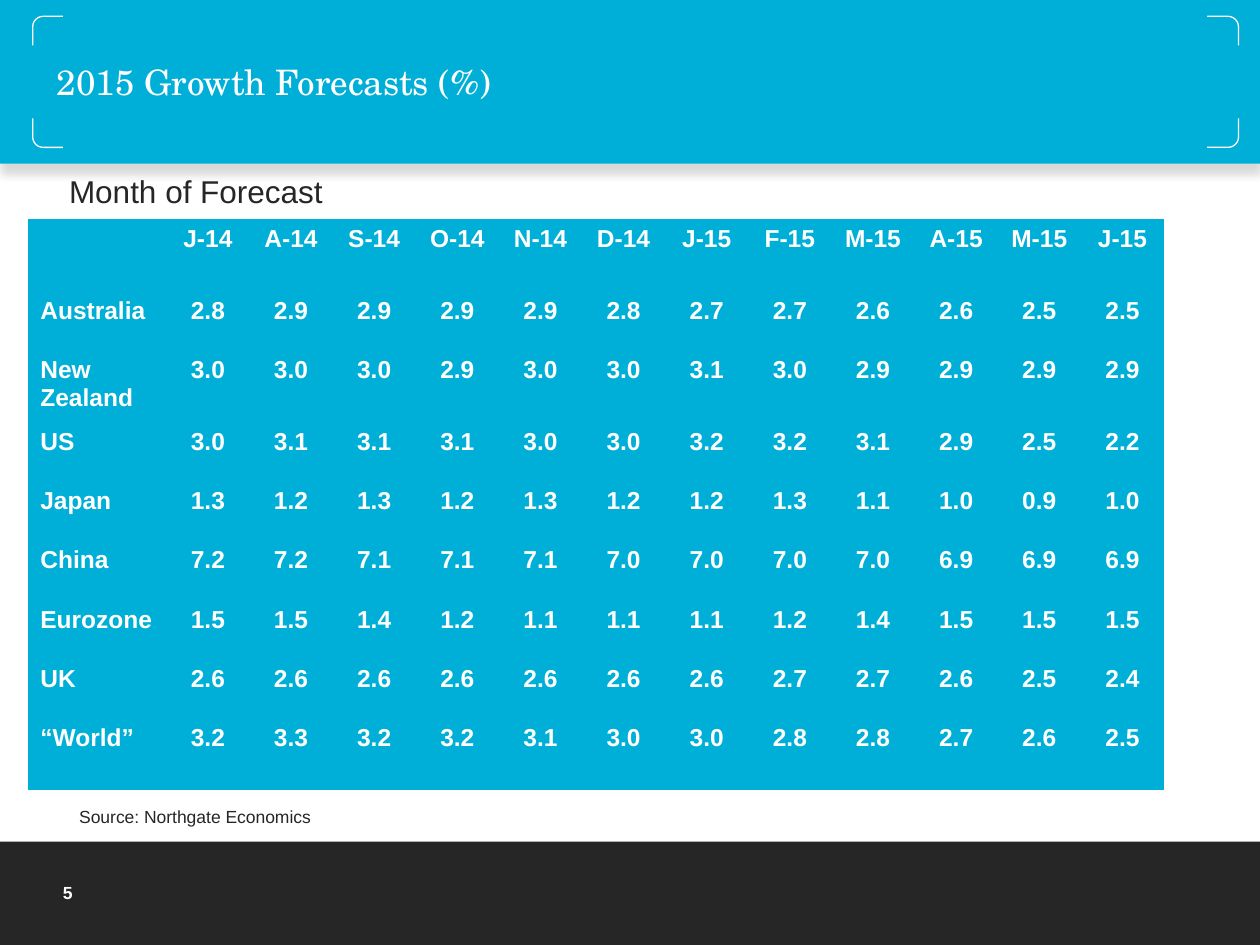
from lxml.etree import SubElement
from pptx import Presentation
from pptx.dml.color import RGBColor
from pptx.enum.shapes import MSO_SHAPE as SHAPE
from pptx.enum.text import MSO_ANCHOR as ANCHOR, PP_ALIGN as ALIGN
from pptx.oxml.ns import qn
from pptx.util import Inches, Pt

BLUE, DARK, WHITE = "00AFD7", "262626", "FFFFFF"
PLAIN_STYLE = "{2D5ABB26-0587-4C30-8999-92F81FD0307C}"
MONTHS = "J-14 A-14 S-14 O-14 N-14 D-14 J-15 F-15 M-15 A-15 M-15 J-15"
FORECASTS = [
    ("", MONTHS),
    ("Australia", "2.8 2.9 2.9 2.9 2.9 2.8 2.7 2.7 2.6 2.6 2.5 2.5"),
    ("New Zealand", "3.0 3.0 3.0 2.9 3.0 3.0 3.1 3.0 2.9 2.9 2.9 2.9"),
    ("US", "3.0 3.1 3.1 3.1 3.0 3.0 3.2 3.2 3.1 2.9 2.5 2.2"),
    ("Japan", "1.3 1.2 1.3 1.2 1.3 1.2 1.2 1.3 1.1 1.0 0.9 1.0"),
    ("China", "7.2 7.2 7.1 7.1 7.1 7.0 7.0 7.0 7.0 6.9 6.9 6.9"),
    ("Eurozone", "1.5 1.5 1.4 1.2 1.1 1.1 1.1 1.2 1.4 1.5 1.5 1.5"),
    ("UK", "2.6 2.6 2.6 2.6 2.6 2.6 2.6 2.7 2.7 2.6 2.5 2.4"),
    ("“World”", "3.2 3.3 3.2 3.2 3.1 3.0 3.0 2.8 2.8 2.7 2.6 2.5"),
]
TALL_ROWS = (0, 2, 8)


def rgb(color):
    """Return the colour for a hex string."""
    return RGBColor.from_string(color)


def add_run(p, text, size, color, bold=False, font="Arial"):
    """Append a formatted run to a paragraph."""
    r = p.add_run()
    r.text = text
    r.font.name, r.font.size, r.font.bold = font, Pt(size), bold
    r.font.color.rgb = rgb(color)


def add_block(shapes, kind, box, fill, line=None):
    """Add a filled preset shape without a shadow."""
    s = shapes.add_shape(kind, *map(Inches, box))
    s.shadow.inherit = False
    s.fill.solid()
    s.fill.fore_color.rgb = rgb(fill)
    if line:
        s.line.color.rgb = rgb(line)
        s.line.width = Pt(0.75)
    else:
        s.line.fill.background()
    return s


def add_drop_shadow(s):
    """Give a shape a soft shadow straight below it."""
    effects = s._element.spPr.find(qn("a:effectLst"))
    shadow = SubElement(effects, qn("a:outerShdw"), blurRad=str(Pt(5)),
                        dist=str(Pt(5)), dir="5400000", rotWithShape="0")
    color = SubElement(shadow, qn("a:srgbClr"), val="000000")
    SubElement(color, qn("a:alpha"), val="15000")


def add_corner_frame(slide):
    """Add a rounded frame whose sides are covered so only corners show."""
    shapes = slide.shapes.add_group_shape().shapes
    frame = add_block(shapes, SHAPE.ROUNDED_RECTANGLE,
                      (0.26, 0.13, 9.57, 1.04), BLUE, WHITE)
    frame.adjustments[0] = 0.08
    for box in ((0.15, 0.36, 9.75, 0.58), (0.5, 0.06, 9.08, 1.18)):
        add_block(shapes, SHAPE.RECTANGLE, box, BLUE)


def add_title(slide, text):
    """Place and fill the title placeholder."""
    s = slide.shapes.title
    s.left, s.top, s.width, s.height = map(Inches, (0.35, 0.4, 8.97, 0.49))
    tf = s.text_frame
    tf.vertical_anchor = ANCHOR.MIDDLE
    p = tf.paragraphs[0]
    p.alignment = ALIGN.LEFT
    add_run(p, text, 20, WHITE, font="TeX Gyre Schola")


def add_label(slide, box, text, size, color, bold=False, anchor=ANCHOR.TOP):
    """Add a one-line text box."""
    tf = slide.shapes.add_textbox(*map(Inches, box)).text_frame
    tf.word_wrap = True
    tf.vertical_anchor = anchor
    add_run(tf.paragraphs[0], text, size, color, bold)


def fill_cell(cell, text, align):
    """Colour a table cell and write its text."""
    cell.fill.solid()
    cell.fill.fore_color.rgb = rgb(BLUE)
    if text:
        p = cell.text_frame.paragraphs[0]
        p.alignment = align
        add_run(p, text, 14, WHITE, bold=True)


def add_forecast_table(slide):
    """Add the table of forecasts by economy and month."""
    rows = [[name, *values.split()] for name, values in FORECASTS]
    s = slide.shapes.add_table(len(rows), len(rows[0]),
                               *map(Inches, (0.22, 1.74, 8.98, 4.53)))
    table = s.table
    table.first_row = table.horz_banding = False
    table._tbl.tblPr.find(qn("a:tableStyleId")).text = PLAIN_STYLE
    for i, column in enumerate(table.columns):
        column.width = Inches(0.66 if i else 1.1)
    for i, row in enumerate(rows):
        table.rows[i].height = Inches(0.57 if i in TALL_ROWS else 0.47)
        for j, text in enumerate(row):
            fill_cell(table.cell(i, j), text, ALIGN.CENTER if j else ALIGN.LEFT)


def main():
    """Build and save the slide."""
    prs = Presentation()
    prs.slide_width, prs.slide_height = Inches(10), Inches(7.5)
    slide = prs.slides.add_slide(prs.slide_layouts[5])
    add_block(slide.shapes, SHAPE.RECTANGLE, (0, 6.68, 10, 0.82), DARK)
    header = add_block(slide.shapes, SHAPE.RECTANGLE, (0, 0, 10, 1.3), BLUE)
    add_drop_shadow(header)
    add_corner_frame(slide)
    add_title(slide, "2015 Growth Forecasts (%)")
    title = slide.shapes.title._element
    title.getparent().append(title)
    add_label(slide, (0.4, 6.95, 1.16, 0.27), "5", 10, WHITE, True, ANCHOR.MIDDLE)
    add_label(slide, (0.45, 1.32, 7.5, 0.5), "Month of Forecast", 18, DARK)
    add_forecast_table(slide)
    add_label(slide, (0.53, 6.35, 2.89, 0.27), "Source: Northgate Economics", 10, DARK)
    prs.save("out.pptx")


if __name__ == "__main__":
    main()
